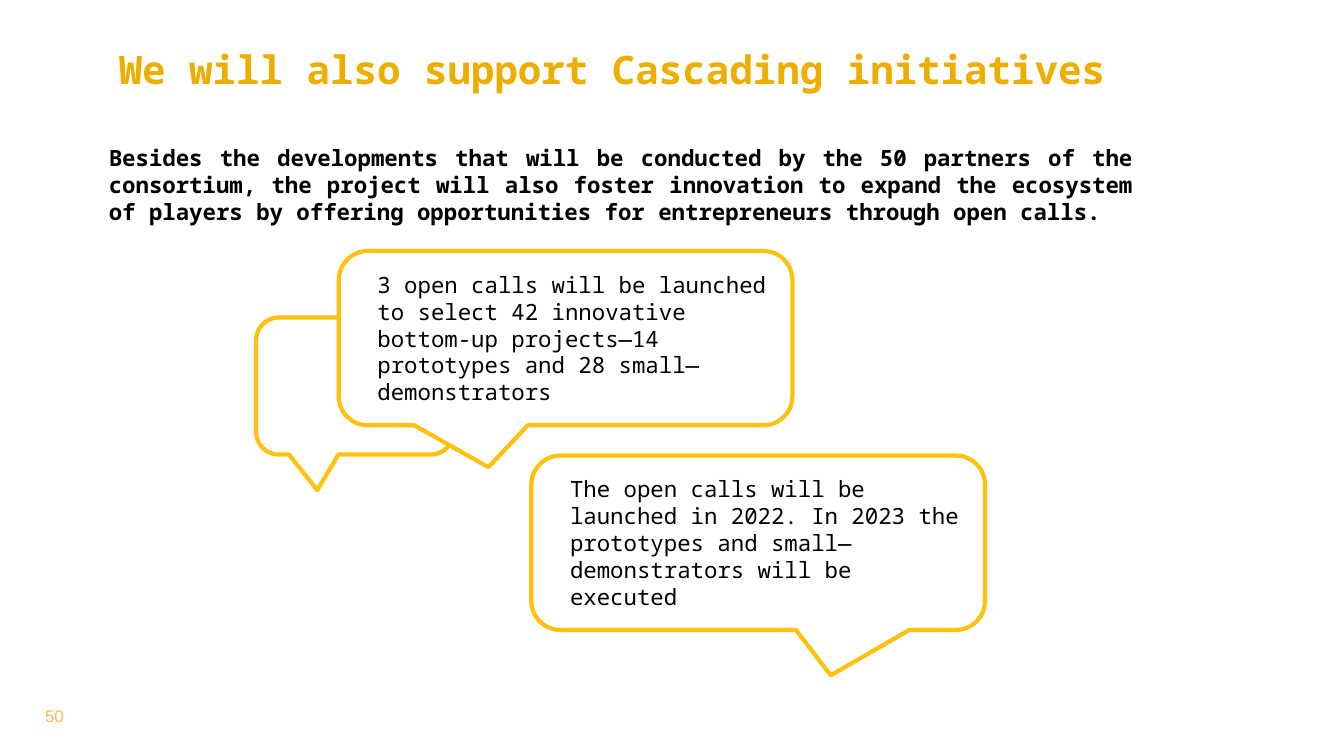
from pptx import Presentation
from pptx.dml.color import RGBColor
from pptx.enum.shapes import MSO_SHAPE
from pptx.enum.text import MSO_ANCHOR, PP_ALIGN
from pptx.util import Inches, Pt

MONO = "Noto Sans Mono"


def color(value):
    return RGBColor.from_string(value)


def write_text(shape, text, size, ink="000000", font=MONO, bold=False,
               align=PP_ALIGN.LEFT, anchor=MSO_ANCHOR.TOP, left=0.1, right=0.1):
    frame = shape.text_frame
    frame.word_wrap = True
    frame.vertical_anchor = anchor
    frame.margin_left, frame.margin_right = Inches(left), Inches(right)
    frame.margin_top = frame.margin_bottom = Inches(0.05)
    frame.text = text
    paragraph = frame.paragraphs[0]
    paragraph.alignment = align
    run = paragraph.runs[0]
    run.font.name = font
    run.font.size = Pt(size)
    run.font.bold = bold
    run.font.color.rgb = color(ink)


def add_label(slide, box, text, size, **style):
    shape = slide.shapes.add_textbox(*map(Inches, box))
    write_text(shape, text, size, **style)


def add_callout(slide, box, tip, text=""):
    shape = slide.shapes.add_shape(MSO_SHAPE.ROUNDED_RECTANGULAR_CALLOUT, *map(Inches, box))
    shape.shadow.inherit = False
    shape.adjustments[0], shape.adjustments[1] = tip
    shape.adjustments[2] = 0.167
    shape.fill.solid()
    shape.fill.fore_color.rgb = color("FFFFFF")
    shape.line.color.rgb = color("FEC10D")
    shape.line.width = Pt(3)
    if text:
        write_text(shape, text, 16, anchor=MSO_ANCHOR.MIDDLE, left=0.3)


def add_heading(slide, left, top, width):
    add_label(slide, (left, top, width, 0.9), "We will also support Cascading initiatives",
              28, ink="EDAE00", bold=True)
    add_label(slide, (left, top + 0.97, width, 0.91),
              "Besides the developments that will be conducted by the 50 partners of the "
              "consortium, the project will also foster innovation to expand the ecosystem of "
              "players by offering opportunities for entrepreneurs through open calls.",
              16, bold=True, align=PP_ALIGN.JUSTIFY, anchor=MSO_ANCHOR.BOTTOM, left=0, right=0)


def add_open_calls(slide, left, top):
    add_callout(slide, (left, top + 0.66, 1.96, 1.36), (-0.19, 0.76))
    add_callout(slide, (left + 0.82, top, 4.5, 1.73), (-0.17, 0.74),
                "3 open calls will be launched to select 42 innovative bottom-up "
                "projects—14 prototypes and 28 small—demonstrators")
    add_callout(slide, (left + 2.73, top + 2.03, 4.5, 1.73), (0.16, 0.76),
                "The open calls will be launched in 2022. In 2023 the prototypes and "
                "small—demonstrators will be executed")


def main():
    presentation = Presentation()
    presentation.slide_width, presentation.slide_height = Inches(13.33), Inches(7.5)
    slide = presentation.slides.add_slide(presentation.slide_layouts[6])
    add_heading(slide, 1.08, 0.4, 10.16)
    add_open_calls(slide, 2.54, 2.49)
    add_label(slide, (0, 6.71, 1.08, 0.79), "50", 12, ink="FFB944", font="Arial",
              align=PP_ALIGN.CENTER, anchor=MSO_ANCHOR.MIDDLE)
    presentation.save("out.pptx")


if __name__ == "__main__":
    main()
